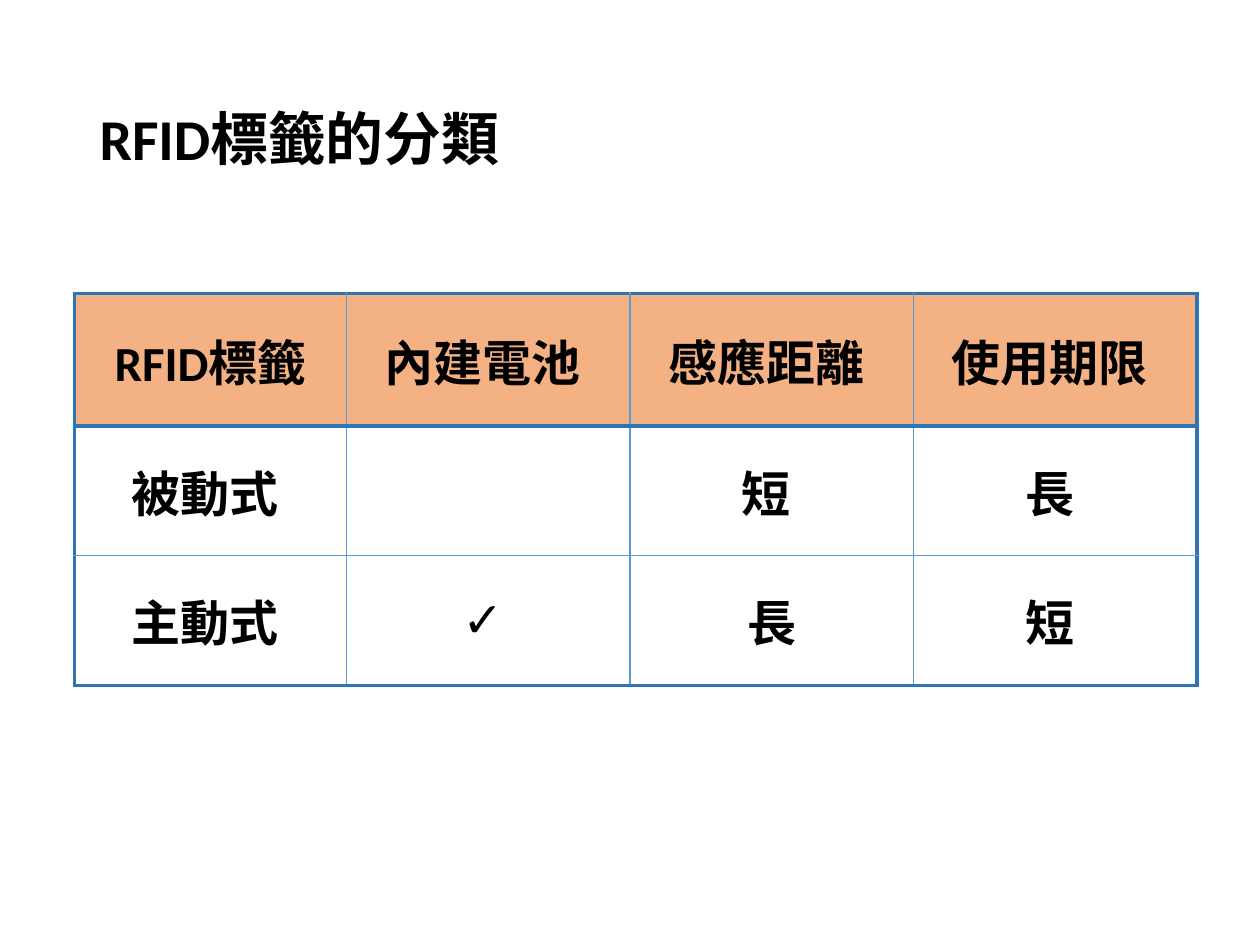
from lxml.etree import SubElement
from pptx import Presentation
from pptx.dml.color import RGBColor
from pptx.enum.text import MSO_ANCHOR, MSO_AUTO_SIZE, PP_ALIGN
from pptx.oxml.ns import qn
from pptx.util import Inches, Pt

# Content
TITLE = "RFID標籤的分類"
ROWS = [
    ["RFID標籤", "內建電池 ", "感應距離 ", "使用期限 "],
    ["被動式 ", "", "短 ", "長 "],
    ["主動式 ", "✓ ", "長", "短 "],
]
COLUMN_WIDTHS = [2.16, 2.25, 2.25, 2.25]
ROW_HEIGHTS = [1.05, 1.03, 1.03]

# Style
FONT = "Calibri"
BLACK, HEADER_FILL = "000000", "F4B183"
THICK = ("2E75B6", 2.25)
THIN = ("5B9BD5", 1)


def color(value):
    return RGBColor.from_string(value)


def add_text(para, text, size):
    span = para.add_run()
    span.text = text
    span.font.name = FONT
    span.font.size = Pt(size)
    span.font.bold = True
    span.font.color.rgb = color(BLACK)


def add_border(cell, side, line_style):
    line_color, width = line_style
    line = SubElement(cell._tc.get_or_add_tcPr(), qn(f"a:ln{side}"), w=str(Pt(width)))
    fill = SubElement(line, qn("a:solidFill"))
    SubElement(fill, qn("a:srgbClr"), val=line_color)


def format_cell(cell, row, column):
    # Thick lines frame the table and close the header row
    thick_sides = {
        "L": column == 0,
        "R": column == len(COLUMN_WIDTHS) - 1,
        "T": row <= 1,
        "B": row in (0, len(ROWS) - 1),
    }
    for side, is_thick in thick_sides.items():
        add_border(cell, side, THICK if is_thick else THIN)
    if row == 0:
        cell.fill.solid()
        cell.fill.fore_color.rgb = color(HEADER_FILL)
    else:
        cell.fill.background()
    cell.vertical_anchor = MSO_ANCHOR.MIDDLE


def add_title(page):
    title = page.shapes.title
    title.left, title.top = Inches(0.69), Inches(0.4)
    title.width, title.height = Inches(8.62), Inches(1.45)
    frame = title.text_frame
    frame.auto_size = MSO_AUTO_SIZE.NONE
    frame.vertical_anchor = MSO_ANCHOR.MIDDLE
    para = frame.paragraphs[0]
    para.alignment = PP_ALIGN.LEFT
    para.line_spacing = 0.9
    add_text(para, TITLE, 33)


def add_tag_table(page):
    table = page.shapes.add_table(
        len(ROWS), len(COLUMN_WIDTHS), Inches(0.59), Inches(2.33),
        Inches(sum(COLUMN_WIDTHS)), Inches(sum(ROW_HEIGHTS))).table
    table.horz_banding = False
    for column, width in zip(table.columns, COLUMN_WIDTHS):
        column.width = Inches(width)
    for row, height in zip(table.rows, ROW_HEIGHTS):
        row.height = Inches(height)
    for row, texts in enumerate(ROWS):
        for column, text in enumerate(texts):
            cell = table.cell(row, column)
            format_cell(cell, row, column)
            if text:
                para = cell.text_frame.paragraphs[0]
                para.alignment = PP_ALIGN.CENTER
                para.space_before = Pt(5.6)
                add_text(para, text, 28)


def main():
    deck = Presentation()
    deck.slide_width, deck.slide_height = Inches(10), Inches(7.5)
    page = deck.slides.add_slide(deck.slide_layouts[5])
    add_title(page)
    add_tag_table(page)
    deck.save("out.pptx")


if __name__ == "__main__":
    main()
